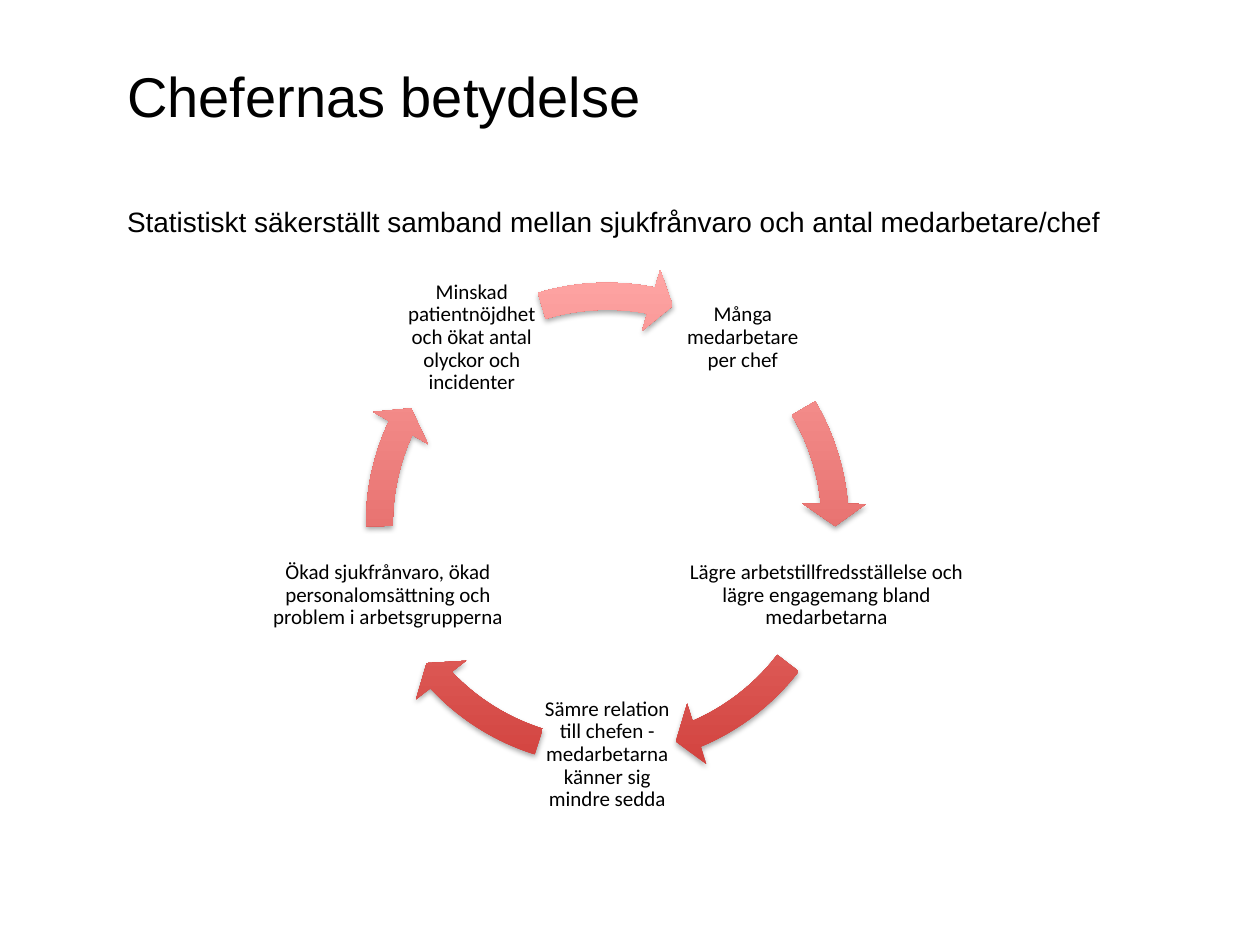
from math import cos, radians, sin

from lxml.etree import SubElement
from pptx import Presentation
from pptx.dml.color import RGBColor
from pptx.enum.shapes import MSO_SHAPE
from pptx.enum.text import MSO_ANCHOR, PP_ALIGN
from pptx.oxml.ns import qn
from pptx.util import Inches, Pt

TITLE = "Chefernas betydelse"
CLAIM = "Statistiskt säkerställt samband mellan sjukfrånvaro och antal medarbetare/chef"
# text, width of its box, start and end angle of the arrow that follows
STEPS = [
    ("Många medarbetare per chef", 1.1, 329.44, 354.88),
    ("Lägre arbetstillfredsställelse och lägre engagemang bland medarbetarna", 2.37, 37.56, 66.9),
    ("Sämre relation till chefen - medarbetarna känner sig mindre sedda", 1.1, 107.5, 136.84),
    ("Ökad sjukfrånvaro, ökad personalomsättning och problem i arbetsgrupperna", 2.16, 179.52, 204.96),
    ("Minskad patientnöjdhet och ökat antal olyckor och incidenter", 1.1, 253.31, 281.09),
]
CENTER_X, CENTER_Y, RADIUS = 4.82, 4.16, 1.83
STEP_HEIGHT, RING_SIZE = 1.1, 4.12
FIRST_ANGLE = -54
DARK_RED, LIGHT_RED, BLACK = "D1403C", "FFA6A5", "000000"


def color(value):
    return RGBColor.from_string(value)


def box_around(x, y, width, height):
    return [Inches(v) for v in (x - width / 2, y - height / 2, width, height)]


def add_text(slide, text, box, font, size, spacing):
    frame = slide.shapes.add_textbox(*box).text_frame
    frame.word_wrap = True
    paragraph = frame.paragraphs[0]
    paragraph.text = text
    paragraph.line_spacing = spacing
    paragraph.font.name = font
    paragraph.font.size = Pt(size)
    paragraph.font.color.rgb = color(BLACK)
    return frame


def add_step(slide, text, x, y, width):
    frame = add_text(slide, text, box_around(x, y, width, STEP_HEIGHT), "Calibri", 12, 0.9)
    frame.vertical_anchor = MSO_ANCHOR.MIDDLE
    frame.margin_left = frame.margin_right = Inches(0.02)
    frame.margin_top = frame.margin_bottom = Inches(0.02)
    frame.paragraphs[0].alignment = PP_ALIGN.CENTER


def add_shadow(shape):
    shape.shadow.inherit = False
    effects = shape._element.spPr.find(qn("a:effectLst"))
    shadow = SubElement(effects, qn("a:outerShdw"), blurRad="40000", dist="23000",
                        dir="5400000", rotWithShape="0")
    tint = SubElement(shadow, qn("a:srgbClr"), val=BLACK)
    SubElement(tint, qn("a:alpha"), val="35000")


def add_arrow(slide, start, end):
    arrow = slide.shapes.add_shape(
        MSO_SHAPE.CIRCULAR_ARROW, *box_around(CENTER_X, CENTER_Y, RING_SIZE, RING_SIZE))
    settings = (0.052, 5.6 * 0.6, end * 0.6, start * 0.6, 0.061)
    for index, setting in enumerate(settings):
        arrow.adjustments[index] = setting
    arrow.fill.gradient()
    arrow.fill.gradient_angle = 90
    for stop, shade in zip(arrow.fill.gradient_stops, (DARK_RED, LIGHT_RED)):
        stop.color.rgb = color(shade)
    arrow.line.fill.background()
    add_shadow(arrow)


def main():
    deck = Presentation()
    deck.slide_width, deck.slide_height = Inches(10), Inches(7.5)
    slide = deck.slides.add_slide(deck.slide_layouts[6])
    add_text(slide, TITLE, [Inches(v) for v in (0.91, 0.44, 8.35, 0.82)], "Arial", 32, 1.0)
    add_text(slide, CLAIM, [Inches(v) for v in (0.91, 1.47, 8.19, 4.72)], "Arial", 16, 1.4)
    for index, (text, width, start, end) in enumerate(STEPS):
        angle = radians(FIRST_ANGLE + index * 360 / len(STEPS))
        add_step(slide, text, CENTER_X + RADIUS * cos(angle),
                 CENTER_Y + RADIUS * sin(angle), width)
        add_arrow(slide, start, end)
    deck.save("out.pptx")


if __name__ == "__main__":
    main()
